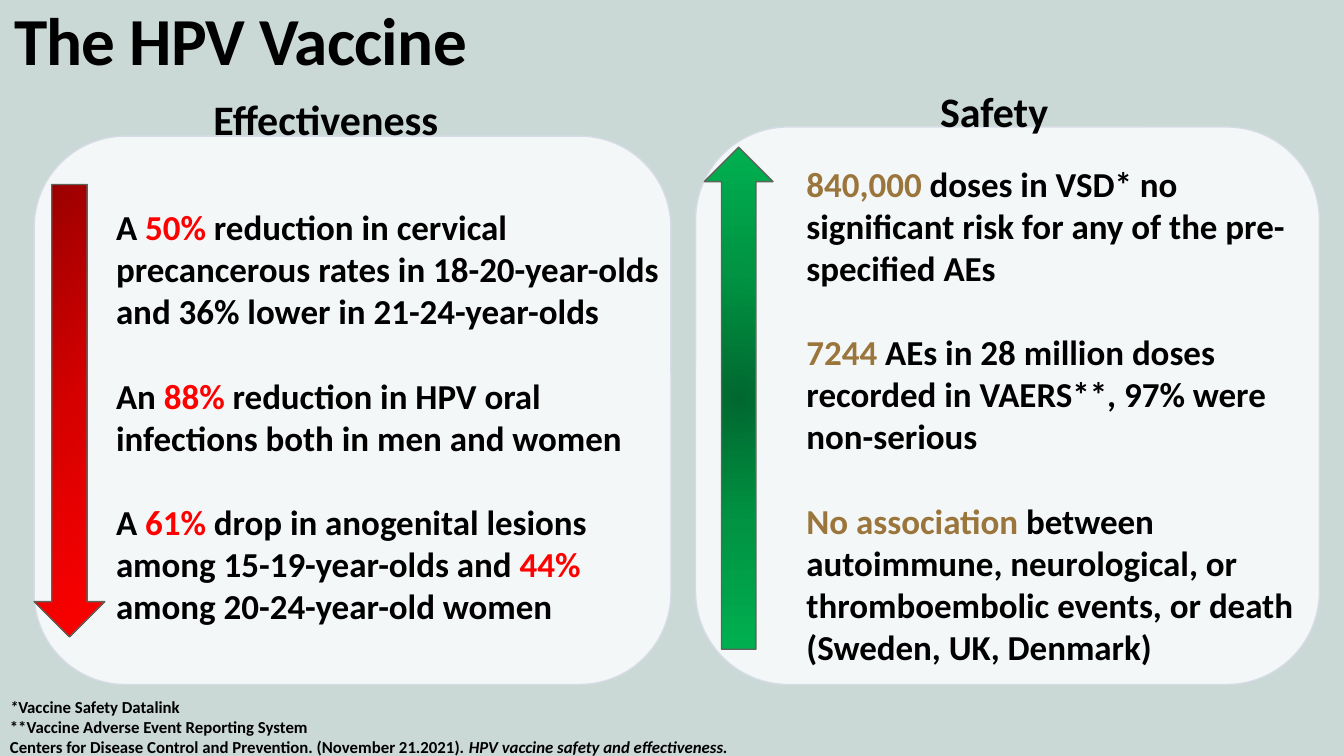
from dataclasses import dataclass

import pptx
import pptx.dml.color
import pptx.enum.shapes
import pptx.enum.text
import pptx.oxml
import pptx.oxml.ns
import pptx.util
from pptx.util import Cm

COLOURS = {
    "background": "CAD8D6", "card": "F4F7F7", "card_line": "D6DCE5",
    "arrow_line": "5D635A", "text": "000000", "drop": "FF0000", "safe": "9A753C",
}
SHAPES = pptx.enum.shapes.MSO_SHAPE
BODY_GAP = 30.5


@dataclass
class Area:
    left: float
    top: float
    width: float
    height: float


@dataclass
class Span:
    text: str
    colour: str = "text"
    italic: bool = False


@dataclass
class Line:
    spans: list[Span]
    before: float = 0


@dataclass
class Arrow:
    area: Area
    rotation: float
    stops: list[str]
    direction: str


@dataclass
class Panel:
    heading: str
    heading_area: Area
    card: Area
    arrow: Arrow
    body_area: Area
    lines: list[Line]


PANELS = [
    Panel(
        "Effectiveness", Area(5.13, 2.24, 6.71, 1.55), Area(0.86, 3.43, 16.05, 13.82),
        Arrow(Area(0.86, 4.65, 1.78, 11.4), 0, ["970000", "D70000", "FF0000"],
              '<a:lin ang="2700000" scaled="1"/>'),
        Area(2.67, 5.05, 14.27, 11.96),
        [
            Line([Span("A "), Span("50% ", "drop"),
                  Span("reduction in cervical precancerous rates in 18-20-year-olds "
                       "and 36% lower in 21-24-year-olds")]),
            Line([Span("An"), Span(" 88% ", "drop"),
                  Span("reduction in HPV oral infections both in men and women")], BODY_GAP),
            Line([Span("A "), Span("61%", "drop"),
                  Span(" drop in anogenital lesions among 15-19-year-olds and "),
                  Span("44%", "drop"), Span(" among 20-24-year-old women")], BODY_GAP),
        ],
    ),
    Panel(
        "Safety", Area(23.44, 2.03, 3.89, 1.55), Area(17.53, 3.2, 15.72, 14.05),
        Arrow(Area(17.75, 3.71, 1.73, 12.65), 180, ["00682F", "009443", "00B050"],
              '<a:path path="circle"><a:fillToRect l="50000" t="50000" r="50000" b="50000"/></a:path>'),
        Area(20.07, 3.96, 13.31, 14.88),
        [
            Line([Span("840,000", "safe"),
                  Span(" doses in VSD* no significant risk for any of the pre-specified AEs")]),
            Line([Span("7244", "safe"),
                  Span(" AEs in 28 million doses recorded in VAERS**, 97% were non-serious")], BODY_GAP),
            Line([Span("No association ", "safe"),
                  Span("between autoimmune, neurological, or thromboembolic events, or death")], BODY_GAP),
            Line([Span("(Sweden, UK, Denmark)")]),
        ],
    ),
]
FOOTNOTES = [
    Line([Span("*", italic=True), Span("Vaccine Safety Datalink")]),
    Line([Span("**Vaccine Adverse Event Reporting System")]),
    Line([Span("Centers for Disease Control and Prevention. (November 21.2021). "),
          Span("HPV vaccine safety and effectiveness.", italic=True)]),
]


def colour(name: str) -> pptx.dml.color.RGBColor:
    return pptx.dml.color.RGBColor.from_string(COLOURS[name])


def apply(target, values: dict) -> None:
    for name, value in values.items():
        setattr(target, name, value)


def place(area: Area) -> dict:
    return {"left": Cm(area.left), "top": Cm(area.top),
            "width": Cm(area.width), "height": Cm(area.height)}


def write(box, lines: list[Line], size: float, spacing: float = 1.0) -> None:
    frame = box.text_frame
    apply(frame, {"word_wrap": True, "auto_size": pptx.enum.text.MSO_AUTO_SIZE.NONE,
                  "vertical_anchor": pptx.enum.text.MSO_ANCHOR.TOP})
    for index, line in enumerate(lines):
        para = frame.add_paragraph() if index else frame.paragraphs[0]
        apply(para, {"alignment": pptx.enum.text.PP_ALIGN.LEFT, "line_spacing": spacing,
                     "space_before": pptx.util.Pt(line.before), "space_after": pptx.util.Pt(0)})
        for span in line.spans:
            run = para.add_run()
            run.text = span.text
            apply(run.font, {"name": "Calibri", "size": pptx.util.Pt(size),
                             "bold": True, "italic": span.italic})
            run.font.color.rgb = colour(span.colour)


def fill_placeholder(box, area: Area, lines: list[Line], size: float, spacing: float = 1.0) -> None:
    apply(box, place(area))
    write(box, lines, size, spacing)
    for para in box.text_frame.paragraphs:
        properties = para.runs[0].font._element.getparent().getparent().get_or_add_pPr()
        properties.set("marL", "0")
        properties.set("indent", "0")
        properties.append(pptx.oxml.parse_xml(f'<a:buNone {pptx.oxml.ns.nsdecls("a")}/>'))
    box.element.getparent().append(box.element)


def add_text(page, area: Area, lines: list[Line], size: float) -> None:
    write(page.shapes.add_textbox(**place(area)), lines, size)


def add_outlined(page, kind, area: Area, line: str):
    shape = page.shapes.add_shape(kind, **place(area))
    shape.shadow.inherit = False
    shape.line.color.rgb = colour(line)
    shape.line.width = pptx.util.Pt(1)
    return shape


def add_card(page, area: Area) -> None:
    card = add_outlined(page, SHAPES.ROUNDED_RECTANGLE, area, "card_line")
    card.fill.solid()
    card.fill.fore_color.rgb = colour("card")


def add_arrow(page, arrow: Arrow) -> None:
    shape = add_outlined(page, SHAPES.DOWN_ARROW, arrow.area, "arrow_line")
    shape.rotation = arrow.rotation
    stops = "".join(f'<a:gs pos="{index * 50000}"><a:srgbClr val="{value}"/></a:gs>'
                    for index, value in enumerate(arrow.stops))
    gradient = pptx.oxml.parse_xml(
        f'<a:gradFill {pptx.oxml.ns.nsdecls("a")} rotWithShape="1">'
        f"<a:gsLst>{stops}</a:gsLst>{arrow.direction}</a:gradFill>")
    shape.element.spPr.find(pptx.oxml.ns.qn("a:prstGeom")).addnext(gradient)


def main() -> None:
    deck = pptx.Presentation()
    apply(deck, {"slide_width": Cm(33.87), "slide_height": Cm(19.05)})
    page = deck.slides.add_slide(deck.slide_layouts.get_by_name("Two Content"))
    page.background.fill.solid()
    page.background.fill.fore_color.rgb = colour("background")
    title, *bodies = list(page.placeholders)[:3]

    for panel, body in zip(PANELS, bodies):
        add_card(page, panel.card)
        add_arrow(page, panel.arrow)
        add_text(page, panel.heading_area, [Line([Span(panel.heading)])], 30)
        fill_placeholder(body, panel.body_area, panel.lines, 25)

    add_text(page, Area(0, 17.42, 18.8, 1.8), FOOTNOTES, 12)
    fill_placeholder(title, Area(0.1, 0.15, 12.19, 2.01),
                     [Line([Span("The HPV Vaccine")])], 48, 0.85)
    for run in title.text_frame.paragraphs[0].runs:
        run.font._element.set("spc", "-50")
    deck.save("out.pptx")


if __name__ == "__main__":
    main()
